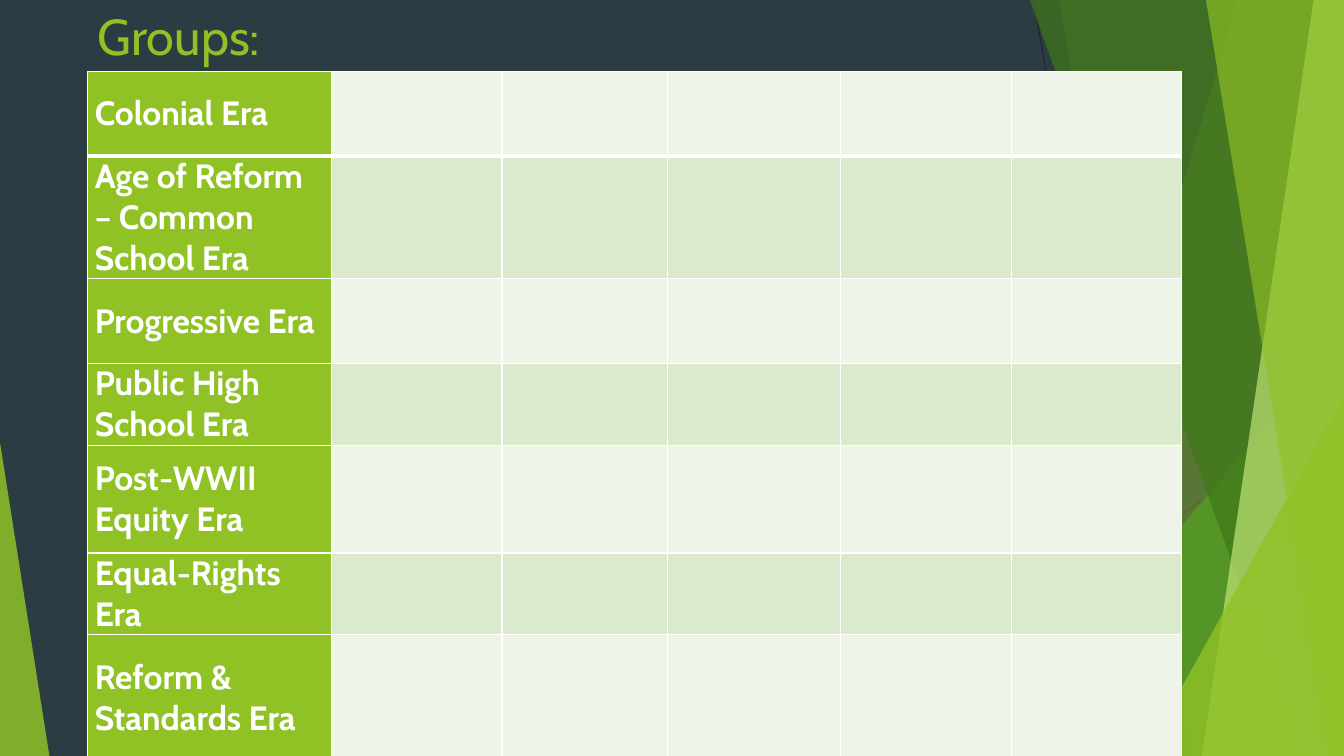
from lxml import etree
from pptx import Presentation
from pptx.dml.color import RGBColor
from pptx.enum.shapes import MSO_CONNECTOR, MSO_SHAPE
from pptx.enum.text import MSO_ANCHOR, PP_ALIGN
from pptx.oxml.ns import qn
from pptx.util import Inches, Pt

STRAIGHT = MSO_CONNECTOR.STRAIGHT
TRIANGLE = MSO_SHAPE.ISOSCELES_TRIANGLE
TOP, MIDDLE = MSO_ANCHOR.TOP, MSO_ANCHOR.MIDDLE
LEFT = PP_ALIGN.LEFT

WIDTH, HEIGHT = 13.33, 7.5
FACET_TOP = -0.01
MARGIN = 0.87
TITLE_ONLY = 5
FONT = "Cabin"
SLATE, GREEN, WHITE = "2C3C43", "90C226", "FFFFFF"
BANDS = ("EEF4E8", "DBE9CD")

COLUMN_WIDTHS = (2.42, 1.69, 1.64, 1.72, 1.69, 1.69)
ERAS = (
    ("Colonial Era", 0.84),
    ("Age of Reform – Common School Era", 1.17),
    ("Progressive Era", 0.84),
    ("Public High School Era", 0.78),
    ("Post-WWII Equity Era", 1.07),
    ("Equal-Rights Era", 0.53),
    ("Reform & Standards Era", 1.25),
)


def color(hex_string):
    return RGBColor.from_string(hex_string)


def paint(shape, fill, opacity):
    """Give a shape a see-through fill with no line or shadow."""
    shape.shadow.inherit = False
    shape.line.fill.background()
    shape.fill.solid()
    shape.fill.fore_color.rgb = color(fill)
    tint = shape.fill._xPr.find(qn("a:solidFill"))[0]
    etree.SubElement(tint, qn("a:alpha"), val=str(opacity * 1000))


def add_thin_line(slide, *ends):
    line = slide.shapes.add_connector(STRAIGHT, *map(Inches, ends))
    line.line.color.rgb = color("262626")
    line.line.width = Pt(0.75)
    etree.SubElement(line.element.spPr, qn("a:effectLst"))


def add_facet(slide, top_x, bottom_x, fill, opacity):
    """Fill the slide from a slanted left edge to its right side."""
    corners = [(WIDTH, FACET_TOP), (WIDTH, HEIGHT), (bottom_x, HEIGHT)]
    builder = slide.shapes.build_freeform(
        Inches(top_x), Inches(FACET_TOP), scale=1.0)
    builder.add_line_segments([(Inches(x), Inches(y)) for x, y in corners])
    paint(builder.convert_to_shape(), fill, opacity)


def add_corner_triangle(slide, left, top, width, apex, fill, opacity):
    """Stand a triangle on the bottom edge; apex is 0 (left) to 1 (right)."""
    shape = slide.shapes.add_shape(
        TRIANGLE, Inches(left), Inches(top), Inches(width),
        Inches(HEIGHT - top))
    shape.adjustments[0] = apex
    paint(shape, fill, opacity)


def add_backdrop(slide):
    slide.background.fill.solid()
    slide.background.fill.fore_color.rgb = color(SLATE)
    add_thin_line(slide, 10.25, 0, 11.58, HEIGHT)
    add_thin_line(slide, WIDTH, 4.03, 8.12, HEIGHT)
    add_facet(slide, 12.28, 10.04, GREEN, 30)
    add_facet(slide, 10.5, 11.83, GREEN, 20)
    add_corner_triangle(slide, 9.77, 3.33, 3.56, 1, "54A021", 72)
    add_facet(slide, 10.21, 12.91, "3F7819", 70)
    add_facet(slide, 13.03, 11.92, "C0E474", 70)
    add_facet(slide, 11.96, 13.18, GREEN, 65)
    add_corner_triangle(slide, 11.34, 3.93, 1.99, 1, GREEN, 80)
    add_corner_triangle(slide, 0, 4.39, 0.49, 0, GREEN, 85)


def format_text(text_frame, size, hex_string, bold=False):
    for paragraph in text_frame.paragraphs:
        paragraph.alignment = LEFT
        for run in paragraph.runs:
            run.font.name = FONT
            run.font.size = Pt(size)
            run.font.bold = bold
            run.font.color.rgb = color(hex_string)


def set_title(slide, text):
    title = slide.shapes.title
    title.left, title.top = Inches(MARGIN), 0
    title.width, title.height = Inches(9.4), Inches(0.87)
    title.text_frame.text = text
    title.text_frame.vertical_anchor = TOP
    format_text(title.text_frame, 36, GREEN)
    title.element.getparent().append(title.element)


def set_borders(cell, **widths):
    """Draw white cell borders, widths in points by side (L, R, T, B)."""
    properties = cell._tc.get_or_add_tcPr()
    for side, width in widths.items():
        border = etree.SubElement(
            properties, qn(f"a:ln{side}"), w=str(Pt(width)))
        fill = etree.SubElement(border, qn("a:solidFill"))
        etree.SubElement(fill, qn("a:srgbClr"), val=WHITE)


def format_cell(cell, fill, top, bottom):
    set_borders(cell, L=1, R=1, T=top, B=bottom)
    cell.fill.solid()
    cell.fill.fore_color.rgb = color(fill)
    cell.vertical_anchor = MIDDLE
    cell.margin_left = cell.margin_right = Inches(0.07)
    cell.margin_top = cell.margin_bottom = 0


def add_era_table(slide):
    table = slide.shapes.add_table(
        len(ERAS), len(COLUMN_WIDTHS), Inches(MARGIN), Inches(0.71),
        Inches(sum(COLUMN_WIDTHS)),
        Inches(sum(height for _, height in ERAS))).table
    table.first_row = table.horz_banding = False
    for column, width in zip(table.columns, COLUMN_WIDTHS):
        column.width = Inches(width)
    for index, (era, height) in enumerate(ERAS):
        row = table.rows[index]
        row.height = Inches(height)
        top = 3 if index == 1 else 1
        bottom = 3 if index == 0 else 1
        for position, cell in enumerate(row.cells):
            fill = BANDS[index % 2] if position else GREEN
            format_cell(cell, fill, top, bottom)
        heading = row.cells[0].text_frame
        heading.text = era
        format_text(heading, 24, WHITE, bold=True)


def main():
    presentation = Presentation()
    presentation.slide_width = Inches(WIDTH)
    presentation.slide_height = Inches(HEIGHT)
    slide = presentation.slides.add_slide(
        presentation.slide_layouts[TITLE_ONLY])
    add_backdrop(slide)
    set_title(slide, "Groups:")
    add_era_table(slide)
    presentation.save("out.pptx")


if __name__ == "__main__":
    main()
